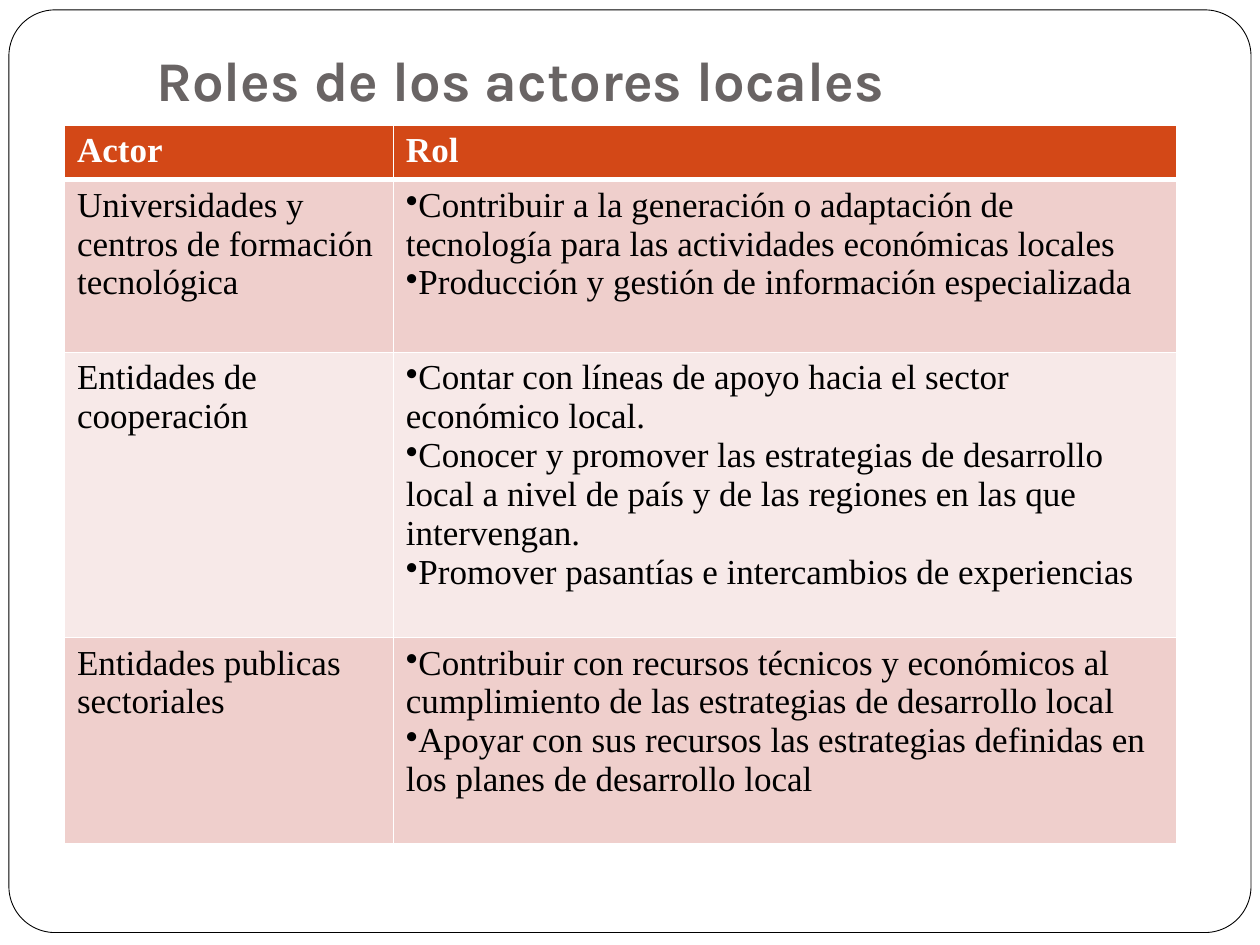
from lxml import etree
from pptx import Presentation
from pptx import util as u
from pptx.dml.color import RGBColor
from pptx.enum import shapes, text
from pptx.oxml import ns

WHITE, BLACK, ORANGE, GREY = "FFFFFF", "000000", "D34817", "696464"
BANDS = ("EFCFCC", "F7E9E8")
HEADINGS = ("Actor", "Rol")
ACTORS = [
    ("Universidades y centros de formación tecnológica", [
        "Contribuir a la generación o adaptación de tecnología para las "
        "actividades económicas locales",
        "Producción y gestión de información especializada",
    ]),
    ("Entidades de cooperación", [
        "Contar con líneas de apoyo hacia el sector económico local.",
        "Conocer y promover las estrategias de desarrollo local a nivel de "
        "país y de las regiones en las que intervengan.",
        "Promover pasantías e intercambios de experiencias",
    ]),
    ("Entidades publicas sectoriales", [
        "Contribuir con recursos técnicos y económicos al cumplimiento de "
        "las estrategias de desarrollo local",
        "Apoyar con sus recursos las estrategias definidas en los planes de "
        "desarrollo local",
    ]),
]
COLUMN_WIDTHS = (6.63, 15.8)
ROW_HEIGHTS = (1.09, 3.48, 5.75, 4.15)
TITLE_FONT = {"name": "Karla", "size": u.Pt(32), "bold": True}
TABLE_FONT = {"name": "Times New Roman", "size": u.Pt(20)}


def color(value):
    return RGBColor.from_string(value)


def paint(fill, value):
    fill.solid()
    fill.fore_color.rgb = color(value)


def apply(target, values):
    for name, value in values.items():
        setattr(target, name, value)


def write(para, words, font, shade):
    span = para.add_run()
    span.text = words
    apply(span.font, font)
    span.font.color.rgb = color(shade)


def add_bullet(para):
    properties = para._p.get_or_add_pPr()
    apply_xml = {"marL": "0", "indent": "0"}
    for name, value in apply_xml.items():
        properties.set(name, value)
    etree.SubElement(properties, ns.qn("a:buChar")).set("char", "•")


def add_borders(cell, bottom):
    properties = cell._tc.get_or_add_tcPr()
    widths = {"lnL": 1, "lnR": 1, "lnT": 1, "lnB": bottom}
    for place, (side, width) in enumerate(widths.items()):
        line = etree.Element(ns.qn(f"a:{side}"), w=str(u.Pt(width)))
        fill = etree.SubElement(line, ns.qn("a:solidFill"))
        etree.SubElement(fill, ns.qn("a:srgbClr")).set("val", WHITE)
        properties.insert(place, line)


def add_frame(page):
    frame = page.shapes.add_shape(
        shapes.MSO_SHAPE.ROUNDED_RECTANGLE,
        u.Cm(0.18), u.Cm(0.2), u.Cm(25.04), u.Cm(18.6))
    frame.adjustments[0] = 0.05
    frame.shadow.inherit = False
    paint(frame.fill, WHITE)
    paint(frame.line.fill, BLACK)
    frame.line.width = u.Pt(0.5)


def add_title(page, words):
    box = page.shapes.add_textbox(u.Cm(2.9), u.Cm(0.53), u.Cm(20.2), u.Cm(2))
    apply(box.text_frame, {
        "word_wrap": True,
        "vertical_anchor": text.MSO_ANCHOR.BOTTOM,
        "margin_bottom": u.Cm(0.25),
    })
    write(box.text_frame.paragraphs[0], words, TITLE_FONT, GREY)


def fill_cell(cell, lines, background, shade, bold=False, bulleted=False, bottom=1):
    paint(cell.fill, background)
    add_borders(cell, bottom)
    frame = cell.text_frame
    for index, words in enumerate(lines):
        para = frame.add_paragraph() if index else frame.paragraphs[0]
        if bulleted:
            add_bullet(para)
        write(para, words, {**TABLE_FONT, "bold": bold}, shade)


def add_roles_table(page):
    table = page.shapes.add_table(
        len(ROW_HEIGHTS), len(COLUMN_WIDTHS), u.Cm(1.3), u.Cm(2.52),
        u.Cm(sum(COLUMN_WIDTHS)), u.Cm(sum(ROW_HEIGHTS))).table
    for column, width in zip(table.columns, COLUMN_WIDTHS):
        column.width = u.Cm(width)
    for row, height in zip(table.rows, ROW_HEIGHTS):
        row.height = u.Cm(height)
    for column, heading in enumerate(HEADINGS):
        fill_cell(table.cell(0, column), [heading], ORANGE, WHITE,
                  bold=True, bottom=3)
    for row, (actor, roles) in enumerate(ACTORS, start=1):
        band = BANDS[(row - 1) % 2]
        fill_cell(table.cell(row, 0), [actor], band, BLACK,)
        fill_cell(table.cell(row, 1), roles, band, BLACK, bulleted=True)
    for column in range(len(HEADINGS)):
        top = table.cell(1, column)._tc.tcPr.find(ns.qn("a:lnT"))
        top.set("w", str(u.Pt(3)))


def main():
    deck = Presentation()
    apply(deck, {"slide_width": u.Cm(25.4), "slide_height": u.Cm(19.05)})
    page = deck.slides.add_slide(deck.slide_layouts[6])
    add_frame(page)
    add_title(page, "Roles de los actores locales")
    add_roles_table(page)
    deck.save("out.pptx")


if __name__ == "__main__":
    main()
